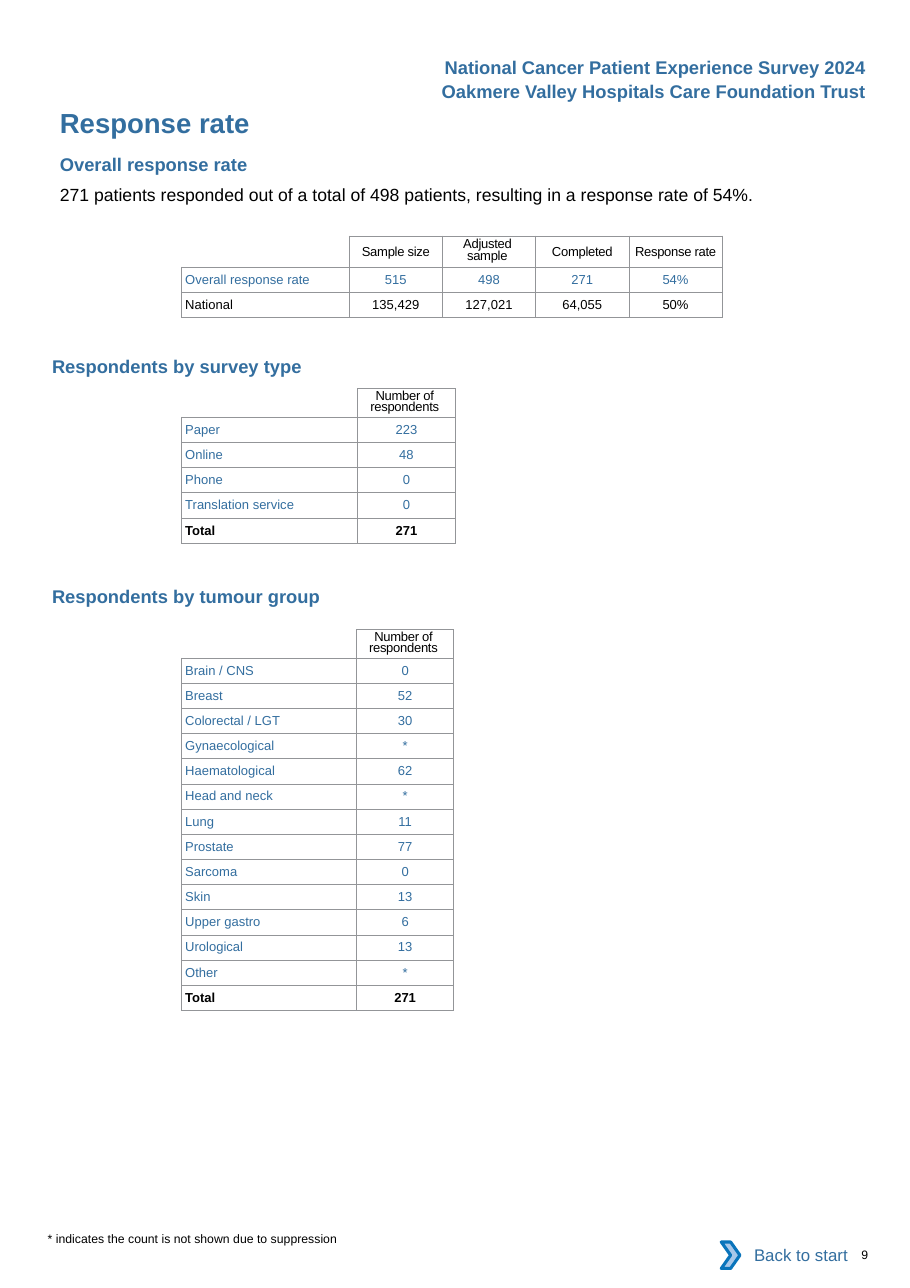
from lxml import etree
from pptx import Presentation
from pptx.dml.color import RGBColor
from pptx.enum.shapes import MSO_SHAPE
from pptx.enum.text import MSO_ANCHOR, MSO_AUTO_SIZE, PP_ALIGN
from pptx.oxml.ns import qn
from pptx.util import Cm, Pt

RECT, ARROW = MSO_SHAPE.RECTANGLE, MSO_SHAPE.CHEVRON
TOP, MID = MSO_ANCHOR.TOP, MSO_ANCHOR.MIDDLE
LEFT, RIGHT, CENTER = PP_ALIGN.LEFT, PP_ALIGN.RIGHT, PP_ALIGN.CENTER
FIXED = MSO_AUTO_SIZE.NONE

BLUE, BLACK, GREY, WHITE = "336E9F", "000000", "939598", "FFFFFF"
PALE, BRIGHT = "A8C7E9", "0A74BB"
TALL = {"Adjusted sample", "Number of respondents"}
SIDES = ("lnL", "lnR", "lnT", "lnB")

OVERALL = [
    ["", "Sample size", "Adjusted sample", "Completed", "Response rate"],
    ["Overall response rate", "515", "498", "271", "54%"],
    ["National", "135,429", "127,021", "64,055", "50%"],
]
SURVEY = [
    ["", "Number of respondents"],
    ["Paper", "223"],
    ["Online", "48"],
    ["Phone", "0"],
    ["Translation service", "0"],
    ["Total", "271"],
]
TUMOUR = [
    ["", "Number of respondents"],
    ["Brain / CNS", "0"],
    ["Breast", "52"],
    ["Colorectal / LGT", "30"],
    ["Gynaecological", "*"],
    ["Haematological", "62"],
    ["Head and neck", "*"],
    ["Lung", "11"],
    ["Prostate", "77"],
    ["Sarcoma", "0"],
    ["Skin", "13"],
    ["Upper gastro", "6"],
    ["Urological", "13"],
    ["Other", "*"],
    ["Total", "271"],
]


def hue(code):
    return RGBColor.from_string(code)


def apply(item, **values):
    for name, value in values.items():
        setattr(item, name, value)


def write(frame, text, size, tint=BLUE, bold=False, align=LEFT, track=0):
    line = frame.paragraphs[0]
    line.alignment = align
    run = line.add_run()
    run.text = text
    apply(run.font, name="Arial", size=Pt(size), bold=bold)
    run.font.color.rgb = hue(tint)
    if track:
        run.font._element.set("spc", str(track))


def strip(frame, pad=0, wrap=True):
    apply(frame, word_wrap=wrap, auto_size=FIXED, vertical_anchor=TOP,
          margin_left=Cm(pad), margin_right=Cm(pad),
          margin_top=Cm(pad / 2), margin_bottom=Cm(pad / 2))


def label(slide, box, text, size, pad=0, wrap=True, **style):
    frame = slide.shapes.add_textbox(*map(Cm, box)).text_frame
    strip(frame, pad, wrap)
    write(frame, text, size, **style)


def head(slide, box):
    left, top, width, height = box
    lines = ("National Cancer Patient Experience Survey 2024",
             "Oakmere Valley Hospitals Care Foundation Trust")
    for i, text in enumerate(lines):
        label(slide, (left, top + i * 0.56, width, height), text, 12,
              pad=0.25, wrap=False, bold=True, align=RIGHT)


def title(slide, box):
    left, top, width, height = map(Cm, box)
    shape = slide.shapes.title
    apply(shape, left=left, top=top, width=width, height=height)
    strip(shape.text_frame)
    write(shape.text_frame, "Response rate", 18, bold=True)


def border(cell, sides):
    props = cell._tc.get_or_add_tcPr()
    for side in SIDES:
        line = etree.SubElement(props, qn("a:" + side), w=str(Pt(0.5)))
        if side in sides:
            fill = etree.SubElement(line, qn("a:solidFill"))
            etree.SubElement(fill, qn("a:srgbClr"), val=GREY)
        else:
            etree.SubElement(line, qn("a:noFill"))


def fill_cell(cell, text, row, col, tint, bold):
    border(cell, SIDES if text else ("lnR", "lnB"))
    cell.fill.background()
    tall = text in TALL
    apply(cell, vertical_anchor=MID, margin_top=0, margin_bottom=0,
          margin_left=Cm(0 if col else 0.08),
          margin_right=Cm(0.08 if tall else 0))
    line = cell.text_frame.paragraphs[0]
    if not text:
        etree.SubElement(line._p, qn("a:endParaRPr"), sz="850")
        return
    write(cell.text_frame, text, 8.5, tint, bold, CENTER if col else LEFT,
          0 if row else -20)
    if tall:
        line.line_spacing = Pt(7.6)


def grid(slide, spot, data, widths, first):
    left, top = spot
    rest = 0.58
    box = (left, top, sum(widths), first + rest * (len(data) - 1))
    table = slide.shapes.add_table(
        len(data), len(widths), *map(Cm, box)).table
    apply(table, first_row=False, horz_banding=False)
    for col, width in enumerate(widths):
        table.columns[col].width = Cm(width)
    for row, words in enumerate(data):
        table.rows[row].height = Cm(rest if row else first)
        bold = words[0] == "Total"
        plain = row == 0 or words[0] in ("National", "Total")
        for col, text in enumerate(words):
            fill_cell(table.cell(row, col), text, row, col,
                      BLACK if plain else BLUE, bold)


def button(slide, box):
    left, top, width, height = box
    group = slide.shapes.add_group_shape()
    parts = (
        (RECT, (left + 0.17, top, width - 0.17, height), WHITE),
        (ARROW, (left, top + 0.23, 0.43, 0.61), PALE),
    )
    plate, arrow = [group.shapes.add_shape(kind, *map(Cm, area))
                    for kind, area, tint in parts]
    for shape, part in zip((plate, arrow), parts):
        shape.shadow.inherit = False
        shape.fill.solid()
        shape.fill.fore_color.rgb = hue(part[2])
    plate.line.fill.background()
    arrow.line.color.rgb = hue(BRIGHT)
    arrow.line.width = Pt(2)
    strip(plate.text_frame, 0.25)
    plate.text_frame.vertical_anchor = MID
    write(plate.text_frame, "Back to start", 11, align=RIGHT)


def foot(slide, box):
    left, top, width, height = box
    label(slide, (left, top, 7, 0.33),
          "* indicates the count is not shown due to suppression", 8,
          tint=BLACK)
    button(slide, (left + 15.53, top + 0.02, 3.17, height))
    label(slide, (left + width - 1, top + 0.38, 1, 0.33), "9", 8,
          tint=BLACK)


def main():
    deck = Presentation()
    apply(deck, slide_width=Cm(20.98), slide_height=Cm(29.69))
    slide = deck.slides.add_slide(deck.slide_layouts[5])
    head(slide, (9.5, 1.16, 10.72, 0.76))
    title(slide, (1.38, 2.44, 10.5, 0.76))
    label(slide, (1.38, 3.52, 10.5, 0.5), "Overall response rate", 12,
          bold=True)
    label(slide, (1.38, 4.24, 18.29, 0.5),
          "271 patients responded out of a total of 498 patients, "
          "resulting in a response rate of 54%.", 11.5, tint=BLACK)
    grid(slide, (4.19, 5.44), OVERALL, [3.86] + [2.15] * 4, 0.72)
    label(slide, (1.2, 8.19, 7, 0.5), "Respondents by survey type", 12,
          bold=True)
    grid(slide, (4.19, 8.96), SURVEY, [4.05, 2.26], 0.66)
    label(slide, (1.2, 13.49, 7, 0.5), "Respondents by tumour group", 12,
          bold=True)
    grid(slide, (4.19, 14.51), TUMOUR, [4.03, 2.24], 0.66)
    foot(slide, (1.1, 28.38, 19.76, 1.07))
    deck.save("out.pptx")


if __name__ == "__main__":
    main()
